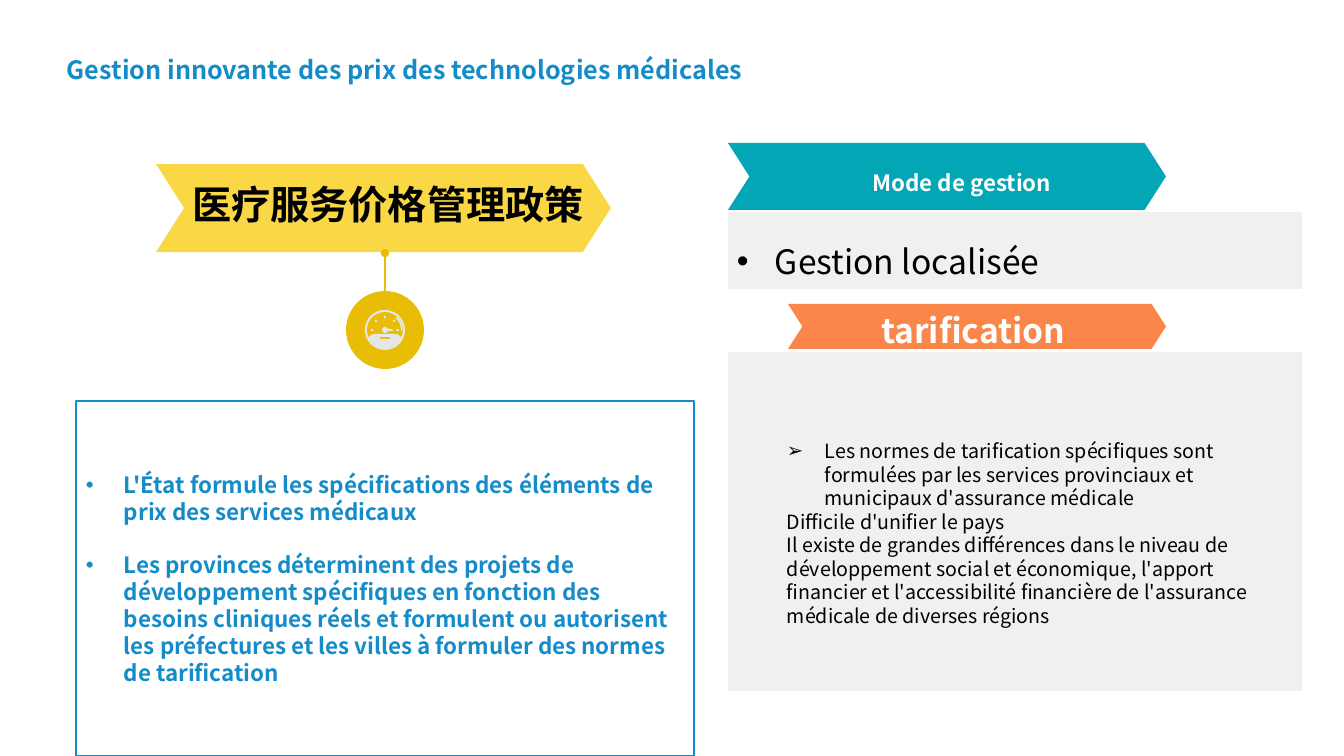
from math import cos, radians, sin

from lxml import etree
from pptx import Presentation
from pptx.dml.color import RGBColor
from pptx.enum.shapes import MSO_CONNECTOR, MSO_SHAPE
from pptx.enum.text import MSO_ANCHOR, MSO_AUTO_SIZE, PP_ALIGN
from pptx.oxml.ns import qn
from pptx.util import Pt

PX = 914400 / 100.8
FONT = "Noto Sans CJK SC"

RECT, OVAL, CHEVRON = MSO_SHAPE.RECTANGLE, MSO_SHAPE.OVAL, MSO_SHAPE.CHEVRON
STRAIGHT = MSO_CONNECTOR.STRAIGHT
LEFT, CENTER = PP_ALIGN.LEFT, PP_ALIGN.CENTER
TOP, MIDDLE = MSO_ANCHOR.TOP, MSO_ANCHOR.MIDDLE
GROW = MSO_AUTO_SIZE.SHAPE_TO_FIT_TEXT

BLACK = RGBColor(0x00, 0x00, 0x00)
WHITE = RGBColor(0xFF, 0xFF, 0xFF)
BLUE = RGBColor(0x14, 0x8C, 0xC9)
GOLD = RGBColor(0xE9, 0xBD, 0x06)
YELLOW = RGBColor(0xFA, 0xD7, 0x45)
TEAL = RGBColor(0x02, 0xA6, 0xB5)
ORANGE = RGBColor(0xFB, 0x86, 0x49)
PALE = RGBColor(0xF0, 0xF0, 0xF0)
SILVER = RGBColor(0xE7, 0xE6, 0xE6)


def emu(px):
    return round(px * PX)


def paint(shape, fill, line=None):
    shape.shadow.inherit = False
    shape.fill.solid()
    shape.fill.fore_color.rgb = fill
    if line is None:
        shape.line.fill.background()
    else:
        shape.line.color.rgb = line
        shape.line.width = Pt(1)


def add_form(slide, kind, box, fill, line=None):
    shape = slide.shapes.add_shape(kind, *map(emu, box))
    paint(shape, fill, line)
    if kind == CHEVRON:
        shape.adjustments[0] = 0.32
    return shape


def write(para, text, size, color, bold=False, **form):
    """Write one paragraph; form holds its further paragraph attributes."""
    run = para.add_run()
    run.text = text
    look = {"name": FONT, "size": Pt(size), "bold": bold}
    for key, value in look.items():
        setattr(run.font, key, value)
    run.font.color.rgb = color
    etree.SubElement(run.font._element, qn("a:ea"), typeface=FONT)
    for key, value in form.items():
        setattr(para, key, value)


def indent(para, left, hang=0, mark=None):
    props = para._p.get_or_add_pPr()
    props.set("marL", str(emu(left)))
    props.set("indent", str(-emu(hang)))
    if mark:
        etree.SubElement(props, qn("a:buFont"), typeface="Arial")
        etree.SubElement(props, qn("a:buChar"), char=mark)
    else:
        etree.SubElement(props, qn("a:buNone"))


def add_label(slide, box, text, size, color, bold=True, align=CENTER, wrap=True):
    frame = slide.shapes.add_textbox(*map(emu, box)).text_frame
    look = {"word_wrap": wrap, "auto_size": GROW, "vertical_anchor": TOP}
    for key, value in look.items():
        setattr(frame, key, value)
    write(frame.paragraphs[0], text, size, color, bold, alignment=align)


def add_panel(slide, box, fill, line, items, size, color, bold=False, inset=5, **form):
    """Draw a box of paragraphs; items are (text, left, hang, mark, gap)."""
    frame = add_form(slide, RECT, box, fill, line).text_frame
    look = {"word_wrap": True, "vertical_anchor": MIDDLE, "margin_top": emu(inset)}
    for key, value in look.items():
        setattr(frame, key, value)
    for i, (text, left, hang, mark, gap) in enumerate(items):
        para = frame.add_paragraph() if i else frame.paragraphs[0]
        write(para, text, size, color, bold, alignment=LEFT, **form)
        if gap:
            para.space_before = Pt(gap)
        indent(para, left, hang, mark)


def add_stem(slide, x, low, high, color):
    stem = slide.shapes.add_connector(STRAIGHT, *map(emu, (x, low, x, high)))
    stem.line.color.rgb = color
    stem.line.width = Pt(1.5)
    etree.SubElement(stem.line._get_or_add_ln(), qn("a:tailEnd"), type="oval")
    etree.SubElement(stem._element.spPr, qn("a:effectLst"))


def arc(radius, start, end):
    step = 6 if end > start else -6
    return [(radius * cos(radians(a)), radius * sin(radians(a)))
            for a in range(start, end + step, step)]


def add_gauge(slide, x, y, color):
    """Dial drawn in tenths of a px around its centre."""
    window = arc(180, 156, 384) + [(130, 45), (90, 38), (-90, 38), (-130, 45)]
    needle = arc(30, 30, 330) + [(85, -5), (85, 5)]
    slot = [(-50, 70), (50, 70), (50, 90), (-50, 90)]
    glint = arc(160, -48, 0) + arc(175, 6, -48)
    ticks = [[(px + dx, py + dy) for dx, dy in arc(11, 0, 354)]
             for px, py in arc(130, 180, 360)[::1] if False]
    for angle in range(180, 361, 45):
        c, s = cos(radians(angle)), sin(radians(angle))
        ticks.append([(r * c - w * s, r * s + w * c)
                      for r, w in ((115, -8), (140, -8), (140, 8), (115, 8))])
    parts = [arc(200, 0, 354), window, needle, slot, glint] + ticks
    pen = None
    for part in parts:
        dots = [(round(a), round(b)) for a, b in part]
        if pen is None:
            pen = slide.shapes.build_freeform(*dots[0], scale=PX / 10)
        else:
            pen.move_to(*dots[0])
        pen.add_line_segments(dots[1:], close=True)
    paint(pen.convert_to_shape(emu(x), emu(y)), color)


def main():
    deck = Presentation()
    deck.slide_width, deck.slide_height = emu(1344), emu(756)
    slide = deck.slides.add_slide(deck.slide_layouts[6])

    # National policy
    add_panel(slide, (76, 401, 618, 355), WHITE, BLUE, [
        ("L'État formule les spécifications des éléments de prix des services "
         "médicaux", 38, 38, "•", 0),
        ("Les provinces déterminent des projets de développement spécifiques "
         "en fonction des besoins cliniques réels et formulent ou autorisent "
         "les préfectures et les villes à formuler des normes de tarification",
         38, 38, "•", 19),
    ], 16, BLUE, bold=True)
    add_form(slide, OVAL, (346, 291, 78, 78), GOLD)
    add_form(slide, CHEVRON, (156, 164, 455, 88), YELLOW)
    add_stem(slide, 385, 317, 253, GOLD)
    add_gauge(slide, 385, 330, SILVER)
    add_label(slide, (179, 175, 418, 57), "医疗服务价格管理政策", 28, BLACK)

    # Management mode and pricing banners
    add_form(slide, CHEVRON, (728, 143, 438, 67), TEAL)
    add_label(slide, (622, 164, 680, 37), "Mode de gestion", 16, WHITE)
    add_form(slide, CHEVRON, (788, 304, 378, 45), ORANGE)
    add_label(slide, (868, 305, 218, 50), "tarification ", 24, WHITE, wrap=False)

    # Management mode and pricing details
    add_panel(slide, (727, 211, 576, 79), PALE, WHITE, [
        ("Gestion localisée", 38, 38, "•", 0),
    ], 24, BLACK, level=1, line_spacing=1.5)
    add_panel(slide, (727, 351, 576, 341), PALE, WHITE, [
        ("Les normes de tarification spécifiques sont formulées par les "
         "services provinciaux et municipaux d'assurance médicale",
         88, 38, "➢", 0),
        ("Difficile d'unifier le pays", 50, 0, None, 0),
        ("Il existe de grandes différences dans le niveau de développement "
         "social et économique, l'apport financier et l'accessibilité "
         "financière de l'assurance médicale de diverses régions",
         50, 0, None, 0),
    ], 14, BLACK, inset=28, level=2)

    # Title
    add_label(slide, (57, 49, 1038, 40),
              "Gestion innovante des prix des technologies médicales",
              18, BLUE, align=LEFT)

    deck.save("out.pptx")


if __name__ == "__main__":
    main()
